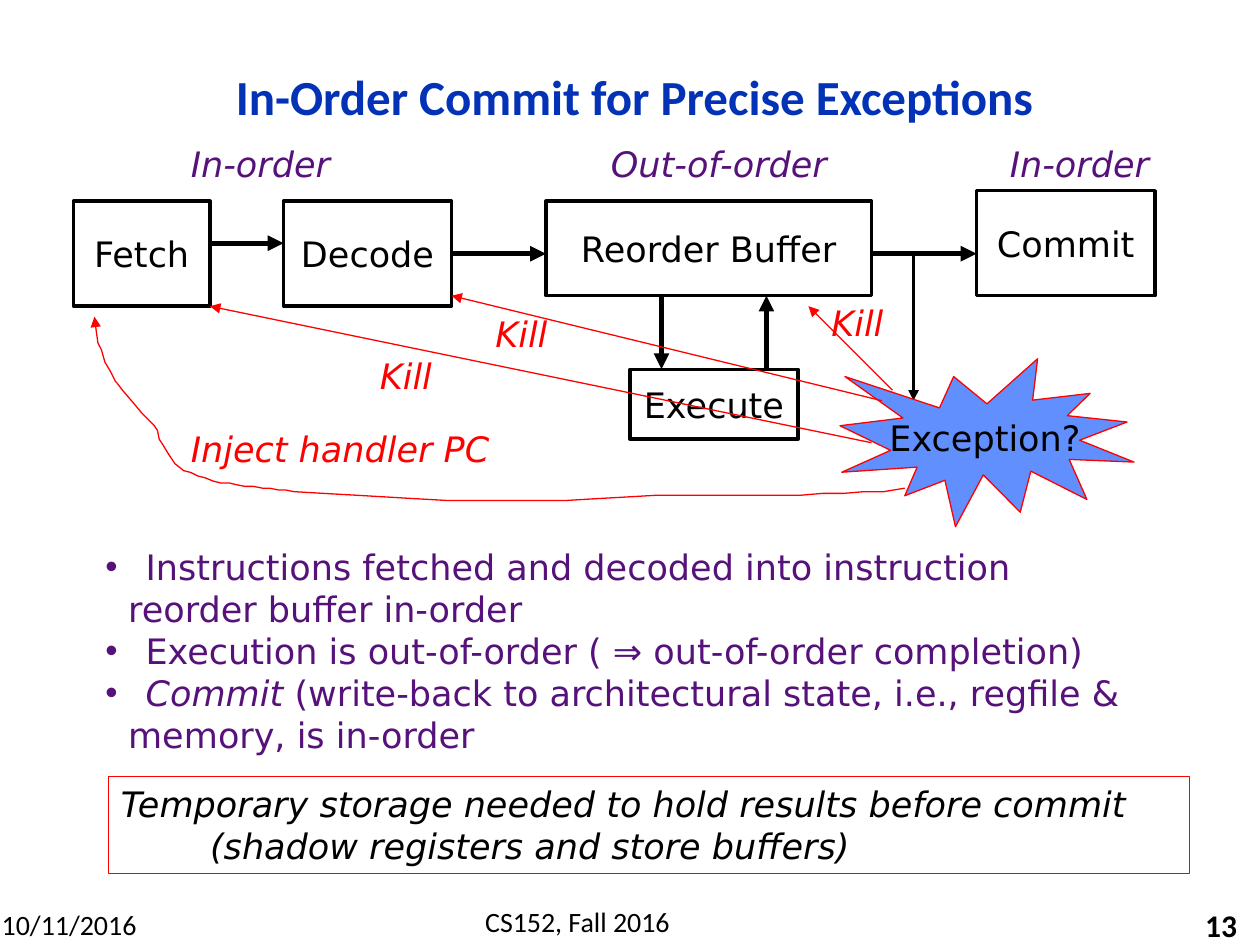
from lxml.etree import SubElement
from pptx import Presentation
from pptx.dml.color import RGBColor
from pptx.enum.shapes import MSO_CONNECTOR, MSO_SHAPE
from pptx.enum.text import MSO_ANCHOR, MSO_AUTO_SIZE, PP_ALIGN
from pptx.oxml.ns import qn
from pptx.util import Pt

BLACK, WHITE, RED = "000000", "FFFFFF", "FF0000"
PURPLE, BLUE, SKY = "56127A", "0332B7", "618FFD"
LEFT, MID, RIGHT = PP_ALIGN.LEFT, PP_ALIGN.CENTER, PP_ALIGN.RIGHT


def tint(part, color):
    """Give a fill or a font one solid colour."""
    if hasattr(part, "solid"):
        part.solid()
        part.fore_color.rgb = RGBColor.from_string(color)
    else:
        part.color.rgb = RGBColor.from_string(color)


def text(para, words, size=20, font="DejaVu Sans", color=BLACK,
         bold=False, italic=False, align=LEFT):
    para.alignment = align
    run = para.add_run()
    run.text = words
    run.font.size = Pt(size)
    run.font.name = font
    run.font.bold = bold
    run.font.italic = italic
    tint(run.font, color)


def place(shape, x, y, w, h):
    shape.left, shape.top, shape.width, shape.height = map(Pt, (x, y, w, h))


def label(slide, box, words, anchor=MSO_ANCHOR.TOP, **form):
    frame = slide.shapes.add_textbox(*map(Pt, box)).text_frame
    frame.word_wrap = False
    frame.vertical_anchor = anchor
    text(frame.paragraphs[0], words, **form)


def block(slide, box, fill=WHITE, line=BLACK, width=2, kind=MSO_SHAPE.RECTANGLE):
    shape = slide.shapes.add_shape(kind, *map(Pt, box))
    shape.shadow.inherit = False
    if fill:
        tint(shape.fill, fill)
    else:
        shape.fill.background()
    tint(shape.line.fill, line)
    shape.line.width = Pt(width)
    return shape


def node(slide, box, words, **look):
    frame = block(slide, box, **look).text_frame
    frame.word_wrap = False
    frame.vertical_anchor = MSO_ANCHOR.MIDDLE
    text(frame.paragraphs[0], words, align=MID)


def point(shape, color, width):
    """Style a line and put an arrowhead at its end."""
    tint(shape.line.fill, color)
    shape.line.width = Pt(width)
    SubElement(shape.line._get_or_add_ln(), qn("a:tailEnd"), type="triangle")


def arrow(slide, start, end, color=BLACK, width=3):
    link = slide.shapes.add_connector(
        MSO_CONNECTOR.STRAIGHT, *map(Pt, (*start, *end)))
    point(link, color, width)
    SubElement(link._element.spPr, qn("a:effectLst"))


def bend(a, b, c, d, steps=12):
    """Points along a cubic curve, without its start."""
    for i in range(1, steps + 1):
        t = i / steps
        s = 1 - t
        yield tuple(s**3 * p + 3 * s * s * t * q + 3 * s * t * t * r + t**3 * u
                    for p, q, r, u in zip(a, b, c, d))


def heading(slide, box):
    title = slide.shapes.title
    place(title, *box)
    frame = title.text_frame
    frame.auto_size = MSO_AUTO_SIZE.NONE
    frame.vertical_anchor = MSO_ANCHOR.MIDDLE
    para = frame.paragraphs[0]
    para.line_spacing = 0.9
    text(para, "In-Order Commit for Precise Exceptions", size=28,
         font="Calibri", color=BLUE, bold=True, align=MID)


def stages(slide, left, top):
    for x, y, w, h, name in (
            (0, 37, 78, 60, "Fetch"), (120, 37, 96, 60, "Decode"),
            (270, 37, 186, 54, "Reorder Buffer"),
            (318, 133, 96, 40, "Execute"), (516, 31, 102, 60, "Commit")):
        node(slide, (left + x, top + y, w, h), name)
    for x, w, name in ((60, 98, "In-order"), (300, 142, "Out-of-order"),
                       (528, 98, "In-order")):
        label(slide, (left + x, top, w, 31), name, color=PURPLE, italic=True)
    for x, y, to_x, to_y, width in (
            (78, 61, 120, 61, 3), (216, 67, 270, 67, 3), (456, 67, 516, 67, 3),
            (336, 91, 336, 133, 3), (396, 133, 396, 91, 3),
            (480, 67, 480, 151, 2)):
        arrow(slide, (left + x, top + y), (left + to_x, top + to_y), width=width)


def faults(slide, left, top):
    """Exception burst with its kill signals and the path back to Fetch."""
    node(slide, (left + 438, top + 127, 168, 96), "Exception?",
         fill=SKY, line=RED, width=0.75, kind=MSO_SHAPE.EXPLOSION1)
    for x, y, to_x, to_y in ((468, 145, 420, 97), (462, 151, 216, 91),
                             (456, 175, 78, 97)):
        arrow(slide, (left + x, top + y), (left + to_x, top + to_y), RED, 0.75)
    for x, y, w, name in ((168, 121, 45, "Kill"), (234, 97, 45, "Kill"),
                          (426, 91, 45, "Kill"), (60, 163, 189, "Inject handler PC")):
        label(slide, (left + x, top + y, w, 31), name, color=RED, italic=True)

    curve = [(475, 201.4), (428, 206.4), (381, 204.2), (334, 205),
             (265, 210), (195, 208.6), (126, 202.8),
             (108, 200), (88, 200), (71, 194)]
    dots = [curve[0]]
    for i in range(0, len(curve) - 1, 3):
        dots += bend(*curve[i:i + 4])
    dots += [(67, 191.5), (63, 190.6), (58.5, 187), (54, 181), (51, 175.5),
             (49.4, 173), (47.5, 168), (46, 164.6), (43.7, 163), (39.4, 158),
             (34, 152), (28, 145), (25, 141), (23.5, 140), (21.4, 134.4),
             (18.5, 129.4), (16.5, 122), (14.2, 118), (12.8, 111), (12, 103.4)]
    dots = [(left + x, top + y) for x, y in dots]
    pen = slide.shapes.build_freeform(*dots[0], scale=Pt(1))
    pen.add_line_segments(dots[1:], close=False)
    path = pen.convert_to_shape()
    path.shadow.inherit = False
    path.fill.background()
    point(path, RED, 0.75)


def points(slide, box):
    body = slide.placeholders[1]
    place(body, *box)
    frame = body.text_frame
    frame.auto_size = MSO_AUTO_SIZE.NONE
    rows = (
        (True, ["Instructions fetched and decoded into instruction"]),
        (False, ["reorder buffer in-order"]),
        (True, ["Execution is out-of-order ( ⇒ out-of-order completion)"]),
        (True, ["Commit ", "(write-back to architectural state, i.e., regfile &"]),
        (False, ["memory, is in-order"]))
    for i, (mark, runs) in enumerate(rows):
        para = frame.add_paragraph() if i else frame.paragraphs[0]
        para.space_before = Pt(0)
        form = para._p.get_or_add_pPr()
        form.set("marL", str(Pt(23 if mark else 13)))
        form.set("indent", str(Pt(-23 if mark else 0)))
        if mark:
            SubElement(form, qn("a:buChar"), char="•")
        else:
            SubElement(form, qn("a:buNone"))
        for words in runs:
            text(para, words, color=PURPLE, italic=words == "Commit ")


def note(slide, box):
    frame = block(slide, box, fill=None, line=RED, width=0.5).text_frame
    frame.word_wrap = True
    frame.vertical_anchor = MSO_ANCHOR.TOP
    text(frame.paragraphs[0], "Temporary storage needed to hold results before commit",
         italic=True)
    para = frame.add_paragraph()
    para._p.get_or_add_pPr().set("marL", str(Pt(51)))
    text(para, "(shadow registers and store buffers)", italic=True)


def footer(slide, top):
    label(slide, (-7, top, 93, 27), "10/11/2016",
          size=16, font="Calibri", align=MID)
    label(slide, (210, top - 1.5, 240, 27), "CS152, Fall 2016",
          size=16, font="Calibri", align=MID)
    label(slide, (564, top + 2, 150, 23), "13", MSO_ANCHOR.MIDDLE,
          size=18, font="Calibri", bold=True, align=RIGHT)


def main():
    deck = Presentation()
    deck.slide_width, deck.slide_height = Pt(720), Pt(540)
    slide = deck.slides.add_slide(deck.slide_layouts[1])
    heading(slide, (21, 18, 683, 78))
    points(slide, (53, 308, 654, 127))
    note(slide, (62, 443.5, 618, 55.5))
    stages(slide, 42, 78)
    faults(slide, 42, 78)
    footer(slide, 515)
    deck.save("out.pptx")


if __name__ == "__main__":
    main()
